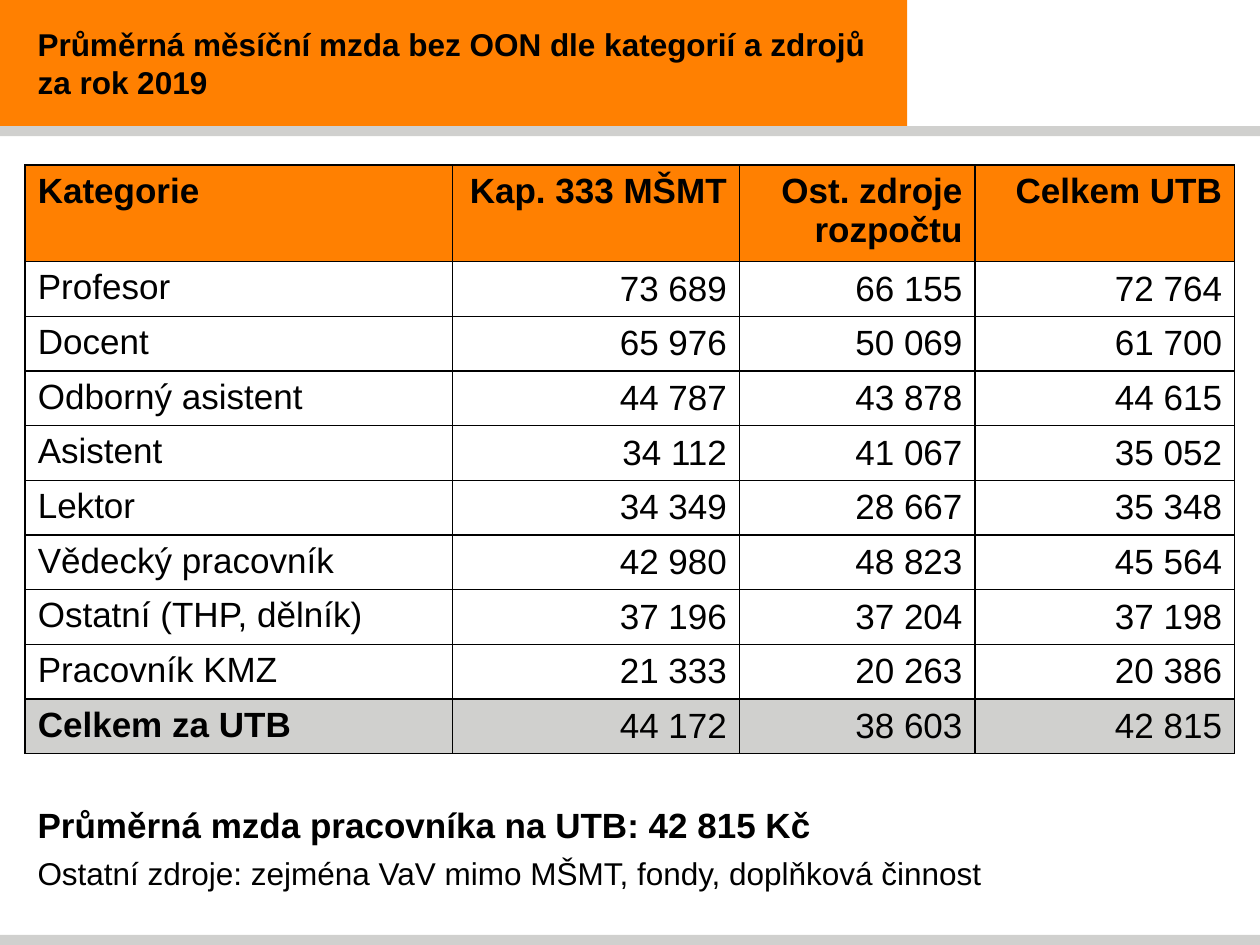
from lxml import etree
from pptx import Presentation
from pptx.dml.color import RGBColor
from pptx.enum.shapes import MSO_SHAPE
from pptx.enum.text import MSO_ANCHOR, PP_ALIGN
from pptx.oxml.ns import qn
from pptx.util import Inches, Pt

RECTANGLE = MSO_SHAPE.RECTANGLE
TOP, MIDDLE = MSO_ANCHOR.TOP, MSO_ANCHOR.MIDDLE
LEFT, RIGHT = PP_ALIGN.LEFT, PP_ALIGN.RIGHT
ORANGE, GRAY, BLACK = "FF8001", "D0D0CE", "000000"
FONT = "Arial"
TITLE = "Průměrná měsíční mzda bez OON dle kategorií a zdrojů \vza rok 2019"
COLUMN_WIDTHS = (3.39, 2.28, 1.87, 2.06)
WAGES = (
    ("Kategorie", "Kap. 333 MŠMT", "Ost. zdroje rozpočtu", "Celkem UTB"),
    ("Profesor", "73 689", "66 155", "72 764"),
    ("Docent", "65 976", "50 069", "61 700"),
    ("Odborný asistent", "44 787", "43 878", "44 615"),
    ("Asistent", "34 112", "41 067", "35 052"),
    ("Lektor", "34 349", "28 667", "35 348"),
    ("Vědecký pracovník", "42 980", "48 823", "45 564"),
    ("Ostatní (THP, dělník)", "37 196", "37 204", "37 198"),
    ("Pracovník KMZ", "21 333", "20 263", "20 386"),
    ("Celkem za UTB", "44 172", "38 603", "42 815"),
)


def color(value):
    """Turn a hex string into a colour."""
    return RGBColor.from_string(value)


def write(paragraph, text, size, bold, align=LEFT):
    """Put styled text into a paragraph."""
    paragraph.text = text
    paragraph.alignment = align
    font = paragraph.font
    font.name, font.size, font.bold = FONT, Pt(size), bold
    font.color.rgb = color(BLACK)


def set_indent(paragraph, margin, first_line=0):
    """Set the left margin and first-line indent in inches."""
    properties = paragraph._p.get_or_add_pPr()
    properties.set("marL", str(Inches(margin)))
    properties.set("indent", str(Inches(first_line)))


def add_band(slide, left, top, width, height, fill):
    """Add a plain filled rectangle."""
    band = slide.shapes.add_shape(
        RECTANGLE, Inches(left), Inches(top), Inches(width), Inches(height))
    band.shadow.inherit = False
    band.fill.solid()
    band.fill.fore_color.rgb = color(fill)
    band.line.fill.background()


def add_text_frame(slide, left, top, width, height):
    """Add a wrapping text box and return its frame."""
    box = slide.shapes.add_textbox(
        Inches(left), Inches(top), Inches(width), Inches(height))
    box.text_frame.word_wrap = True
    return box.text_frame


def add_title(slide, left, top, width, height):
    """Add the title over its orange band."""
    add_band(slide, left, top, width, height, ORANGE)
    frame = add_text_frame(slide, left, top, width, height)
    frame.vertical_anchor = MIDDLE
    paragraph = frame.paragraphs[0]
    write(paragraph, TITLE, 18, True)
    set_indent(paragraph, 0.2)


def add_borders(cell):
    """Draw a thin black line on each side of a cell."""
    properties = cell._tc.get_or_add_tcPr()
    for position, side in enumerate(("a:lnL", "a:lnR", "a:lnT", "a:lnB")):
        line = etree.Element(qn(side), w=str(Pt(1)))
        fill = etree.SubElement(line, qn("a:solidFill"))
        etree.SubElement(fill, qn("a:srgbClr"), val=BLACK)
        properties.insert(position, line)


def add_wage_table(slide, left, top, width, height):
    """Add the table of wages by category and source."""
    table = slide.shapes.add_table(
        len(WAGES), len(COLUMN_WIDTHS), Inches(left), Inches(top),
        Inches(width), Inches(height)).table
    for column, column_width in zip(table.columns, COLUMN_WIDTHS):
        column.width = Inches(column_width)
    last = len(WAGES) - 1
    row_fills = {0: ORANGE, last: GRAY}
    for row, values in enumerate(WAGES):
        for column, value in enumerate(values):
            cell = table.cell(row, column)
            is_label = column == 0
            cell.vertical_anchor = TOP if row == 0 or is_label else MIDDLE
            if row in row_fills:
                cell.fill.solid()
                cell.fill.fore_color.rgb = color(row_fills[row])
            else:
                cell.fill.background()
            add_borders(cell)
            paragraph = cell.text_frame.paragraphs[0]
            bold = row == 0 or (row == last and is_label)
            write(paragraph, value, 20, bold, LEFT if is_label else RIGHT)
            set_indent(paragraph, 0.38, -0.38)


def add_summary(slide, left, top, width, height):
    """Add the average wage and the note on sources."""
    frame = add_text_frame(slide, left, top, width, height)
    write(frame.paragraphs[0],
          "Průměrná mzda pracovníka na UTB: 42 815 Kč", 20, True)
    note = frame.add_paragraph()
    write(note, "Ostatní zdroje: zejména VaV mimo MŠMT, fondy, doplňková činnost",
          18, False)
    note.space_before = Pt(5)


def main():
    """Build and save the slide."""
    presentation = Presentation()
    presentation.slide_width = Inches(10)
    presentation.slide_height = Inches(7.5)
    slide = presentation.slides.add_slide(presentation.slide_layouts[6])
    for top in (1, 7.42):
        add_band(slide, 0, top, 10, 0.08, GRAY)
    add_title(slide, 0, 0, 7.2, 1)
    add_wage_table(slide, 0.2, 1.31, sum(COLUMN_WIDTHS), 4.33)
    add_summary(slide, 0.2, 6.33, 9.06, 0.8)
    presentation.save("out.pptx")


if __name__ == "__main__":
    main()
